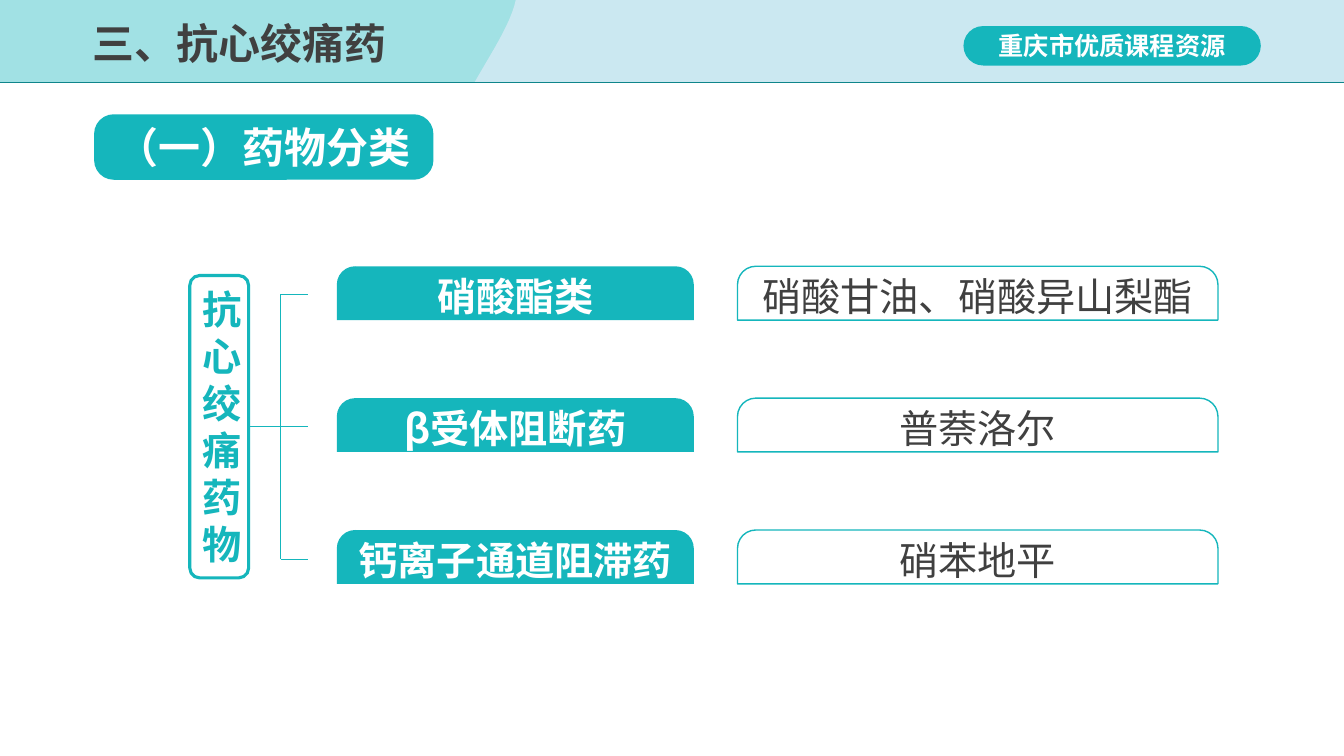
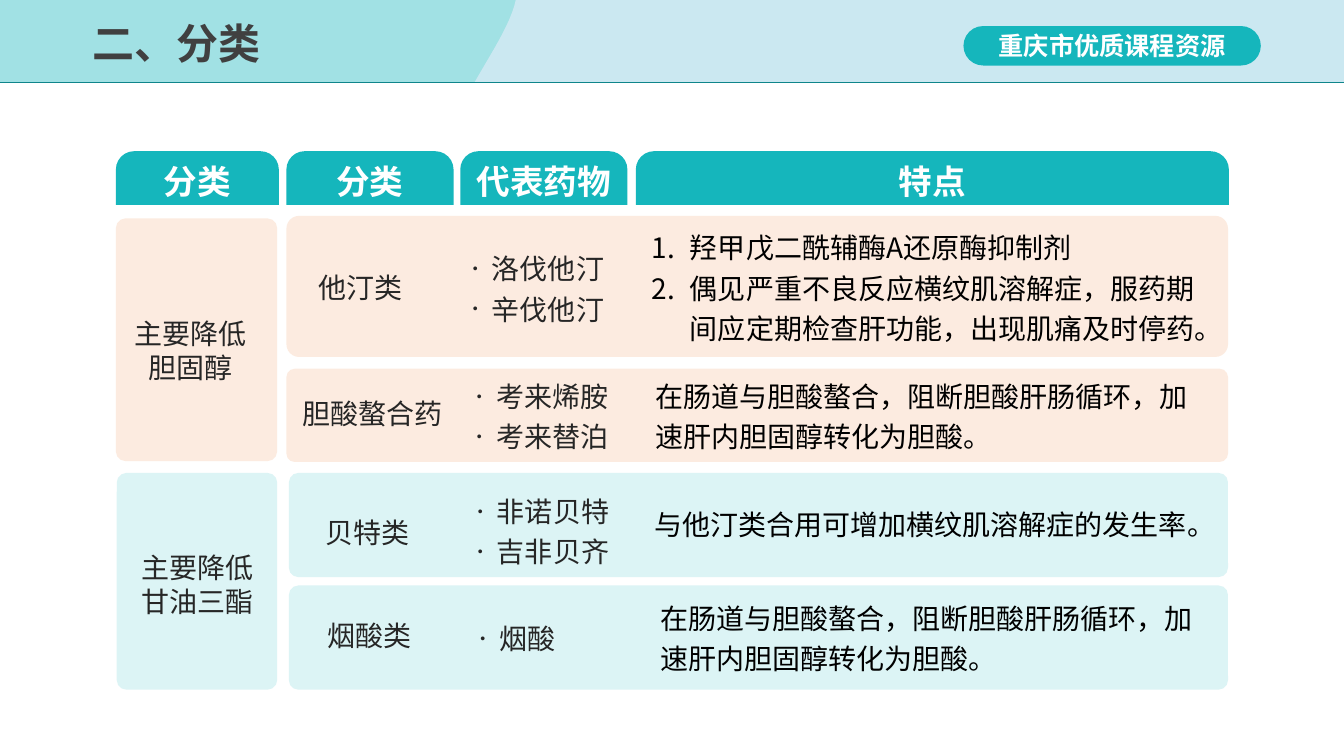
from dataclasses import dataclass
from typing import Optional

from lxml import etree
from pptx import Presentation
from pptx import util as u
from pptx.dml.color import RGBColor
from pptx.enum import shapes as sh
from pptx.enum import text as tx
from pptx.oxml.ns import qn

TEAL = RGBColor(0x15, 0xB6, 0xBC)
RULE = RGBColor(0x0F, 0x85, 0x8B)
MIST = RGBColor(0xDE, 0xEB, 0xF7)
PEACH = RGBColor(0xED, 0x7D, 0x31)
WHITE = RGBColor(0xFF, 0xFF, 0xFF)
GRAY = RGBColor(0x40, 0x40, 0x40)
DARK = RGBColor(0x26, 0x26, 0x26)
BLACK = RGBColor(0, 0, 0)
FACE = "Noto Sans CJK SC"

COLS, ROWS = 160, 90
WIDE, HIGH = u.Inches(13.3333), u.Inches(7.5)
BAND = 9.8
ROUND = sh.MSO_SHAPE.ROUNDED_RECTANGLE
TAB = sh.MSO_SHAPE.ROUND_2_SAME_RECTANGLE
MID = tx.PP_ALIGN.CENTER
LEFT = tx.PP_ALIGN.LEFT


@dataclass(frozen=True)
class Box:
    x: float
    y: float
    w: float
    h: float


@dataclass(frozen=True)
class Type:
    size: float
    ink: RGBColor
    bold: bool = False
    align: tx.PP_ALIGN = MID
    lead: Optional[float] = None
    bullet: str = ""


@dataclass(frozen=True)
class Note:
    x: float
    y: float
    w: float
    lines: tuple[str, ...]


@dataclass(frozen=True)
class Card:
    box: Box
    name: Note
    drugs: Optional[Note] = None
    facts: Optional[Note] = None
    listed: bool = False


def col(n: float) -> int:
    return round(WIDE * n / COLS)


def row(n: float) -> int:
    return round(HIGH * n / ROWS)


def place(box: Box) -> tuple[int, int, int, int]:
    return col(box.x), row(box.y), col(box.w), row(box.h)


def mark(ppr, kind: str) -> None:
    inset = u.Inches(0.38 if kind == "num" else 0.19)
    ppr.set("marL", str(inset))
    ppr.set("indent", str(-inset))
    if kind == "num":
        etree.SubElement(ppr, qn("a:buFont"), typeface="+mj-lt")
        etree.SubElement(ppr, qn("a:buAutoNum"), type="arabicPeriod")
    else:
        etree.SubElement(ppr, qn("a:buSzPct"), val="50000")
        etree.SubElement(ppr, qn("a:buFont"), typeface="Arial")
        etree.SubElement(ppr, qn("a:buChar"), char="•")


def write(shape, lines: tuple[str, ...], style: Type) -> None:
    frame = shape.text_frame
    frame.word_wrap = True
    for i, line in enumerate(lines):
        para = frame.add_paragraph() if i else frame.paragraphs[0]
        para.alignment = style.align
        if style.lead:
            para.line_spacing = style.lead if style.lead < 2 else u.Pt(style.lead)
        run = para.add_run()
        run.text = line
        font = run.font
        font.size, font.bold, font.name = u.Pt(style.size), style.bold, FACE
        font.color.rgb = style.ink
    if style.bullet:
        for ppr in shape.element.iter(qn("a:pPr")):
            mark(ppr, style.bullet)
    for rpr in shape.element.iter(qn("a:rPr")):
        etree.SubElement(rpr, qn("a:ea"), typeface=FACE)


def paint(shape, fill: Optional[RGBColor], share: int = 100) -> None:
    shape.shadow.inherit = False
    shape.line.fill.background()
    if fill is None:
        shape.fill.background()
        return
    shape.fill.solid()
    shape.fill.fore_color.rgb = fill
    if share < 100:
        tint = next(shape.element.iter(qn("a:srgbClr")))
        etree.SubElement(tint, qn("a:alpha"), val=str(share * 1000))


def block(slide, kind, box: Box, fill: Optional[RGBColor], share: int = 100,
          bend: Optional[float] = None, edge: float = 0):
    shape = slide.shapes.add_shape(kind, *place(box))
    paint(shape, fill, share)
    if bend is not None:
        shape.adjustments[0] = bend
    if edge:
        shape.line.color.rgb = TEAL
        shape.line.width = u.Pt(edge)
    return shape


def label(shape, words: str, style: Type) -> None:
    frame = shape.text_frame
    frame.margin_top = frame.margin_bottom = 0
    frame.vertical_anchor = tx.MSO_ANCHOR.MIDDLE
    write(shape, (words,), style)


def tab(slide, box: Box, words: str, style: Type, solid: bool = True) -> None:
    shape = block(slide, TAB, box, TEAL if solid else None, bend=0.34,
                  edge=0 if solid else 1)
    label(shape, words, style)


def note(slide, item: Note, style: Type) -> None:
    shape = slide.shapes.add_textbox(col(item.x), row(item.y), col(item.w), row(5.3))
    shape.text_frame.auto_size = tx.MSO_AUTO_SIZE.SHAPE_TO_FIT_TEXT
    write(shape, item.lines, style)


def wire(slide, x1: float, y1: float, x2: float, y2: float,
         ink: RGBColor = TEAL, width: float = 0.5):
    line = slide.shapes.add_connector(
        sh.MSO_CONNECTOR.STRAIGHT, col(x1), row(y1), col(x2), row(y2))
    line.line.color.rgb = ink
    line.line.width = u.Pt(width)
    etree.SubElement(line.element.spPr, qn("a:effectLst"))
    return line


def curve(pts: list[tuple[float, float]], steps: int) -> list[tuple[int, int]]:
    out = []
    for i in range(steps + 1):
        t = i / steps
        parts = ((1 - t) ** 3, 3 * t * (1 - t) ** 2, 3 * t * t * (1 - t), t ** 3)
        out.append((col(sum(k * p[0] for k, p in zip(parts, pts))),
                    row(sum(k * p[1] for k, p in zip(parts, pts)))))
    return out


def header(slide, layout) -> None:
    for hold in list(layout.placeholders):
        if hold.placeholder_format.idx:
            layout.shapes.element.remove(hold.element)
    hold = layout.placeholders[0]
    hold.left, hold.top, hold.width, hold.height = place(Box(9.8, 1, 66.8, 8.9))
    block(slide, sh.MSO_SHAPE.RECTANGLE, Box(0, 0, COLS, BAND), TEAL, 40)
    pen = slide.shapes.build_freeform(col(COLS), 0)
    side = [(56.5, BAND), (58.3, 6.6), (60.8, 2.9), (61.4, 0)]
    pen.add_line_segments([(col(COLS), row(BAND)), *curve(side, 12)], close=True)
    paint(pen.convert_to_shape(), MIST, 70)
    pill = block(slide, ROUND, Box(114.7, 3.1, 35.4, 4.7), TEAL, bend=0.5)
    label(pill, "重庆市优质课程资源", Type(18, WHITE, True))
    wire(slide, 0, BAND, COLS, BAND, RULE, 1)
    for shape in list(slide.shapes):
        if not shape.is_placeholder:
            layout.shapes.element.append(shape.element)


def head(slide, words: str) -> None:
    title = slide.shapes.title
    title.left, title.top, title.width, title.height = place(Box(9.8, 1, 66.8, 8.9))
    title.text_frame.vertical_anchor = tx.MSO_ANCHOR.MIDDLE
    title.text_frame.auto_size = tx.MSO_AUTO_SIZE.NONE
    write(title, (words,), Type(30, GRAY, True, LEFT, 0.9))


def tree(slide) -> None:
    head(slide, "三、抗心绞痛药")
    top = block(slide, ROUND, Box(11.2, 13.6, 40.4, 7.8), TEAL, bend=0.3)
    label(top, "（一）药物分类", Type(30, WHITE, True))
    pairs = (("硝酸酯类", "硝酸甘油、硝酸异山梨酯"),
             ("β受体阻断药", "普萘洛尔"),
             ("钙离子通道阻滞药", "硝苯地平"))
    for i, (group, drug) in enumerate(pairs):
        y = 31.7 + 15.7 * i
        tab(slide, Box(40.1, y, 42.5, 6.4), group, Type(28, WHITE, True))
        tab(slide, Box(87.8, y, 57.2, 6.4), drug, Type(28, GRAY), False)
    box = Box(22.6, 32.8, 7, 36)
    root = block(slide, ROUND, box, None, edge=2.25)
    label(root, "抗心绞痛药物", Type(28, TEAL, True, lead=33.6))
    mid, reach, spine, tip = box.y + box.h / 2, 15.75, 33.4, 36.7
    stem = wire(slide, box.x + box.w, mid, tip, mid)
    stem.begin_connect(root, 3)
    wire(slide, spine, mid - reach, spine, mid + reach)
    for y in (mid - reach, mid + reach):
        wire(slide, spine, y, tip, y)


BILE = "在肠道与胆酸螯合，阻断胆酸肝肠循环，加速肝内胆固醇转化为胆酸。"
TABS = ((13.8, 19.4, "分类"), (34.1, 19.9, "分类"),
        (54.8, 19.9, "代表药物"), (75.7, 70.6, "特点"))
FATS = (
    (PEACH, (
        Card(Box(13.8, 26, 19.2, 28.9), Note(13.9, 37.1, 17.5, ("主要降低胆固醇",))),
        Card(Box(34.1, 25.7, 112.1, 16.8), Note(34.2, 31.6, 17.5, ("他汀类",)),
             Note(55.1, 28.6, 20.5, ("洛伐他汀", "辛伐他汀")),
             Note(76.4, 26.1, 67.1, (
                 "羟甲戊二酰辅酶A还原酶抑制剂",
                 "偶见严重不良反应横纹肌溶解症，服药期间应定期检查肝功能，出现肌痛及时停药。")),
             True),
        Card(Box(34.1, 43.9, 112.1, 11.1), Note(34.4, 46.6, 20, ("胆酸螯合药",)),
             Note(55.6, 43.8, 18.7, ("考来烯胺", "考来替泊")),
             Note(76.8, 43.8, 66.6, (BILE,))))),
    (TEAL, (
        Card(Box(13.9, 56.3, 19.1, 25.8), Note(14.8, 65, 17.5, ("主要降低甘油三酯",))),
        Card(Box(34.4, 56.3, 111.8, 12.4), Note(35, 60.8, 17.5, ("贝特类",)),
             Note(55.7, 57.5, 20.5, ("非诺贝特", "吉非贝齐")),
             Note(76.7, 59, 67.1, ("与他汀类合用可增加横纹肌溶解症的发生率。",))),
        Card(Box(34.4, 69.7, 111.8, 12.4), Note(36.2, 73.1, 15.5, ("烟酸类",)),
             Note(56, 72.6, 18.7, ("烟酸",)),
             Note(77.4, 70.2, 66.6, (BILE,))))),
)


def grid(slide) -> None:
    head(slide, "二、分类")
    for x, w, words in TABS:
        tab(slide, Box(x, 18, w, 6.4), words, Type(24, WHITE, True))
    for hue, cards in FATS:
        for card in cards:
            block(slide, ROUND, card.box, hue, 15, 0.09 if card.drugs else 0.06)
            note(slide, card.name, Type(20, DARK, lead=24))
            if card.drugs:
                note(slide, card.drugs, Type(20, DARK, False, LEFT, 28.8, "dot"))
            if card.facts:
                kind = "num" if card.listed else ""
                note(slide, card.facts, Type(20, BLACK, False, LEFT, 28.8, kind))


def main() -> None:
    deck = Presentation()
    deck.slide_width, deck.slide_height = WIDE, HIGH
    layout = deck.slide_layouts[5]
    first = deck.slides.add_slide(layout)
    header(first, layout)
    tree(first)
    grid(deck.slides.add_slide(layout))
    deck.save("out.pptx")


if __name__ == "__main__":
    main()
